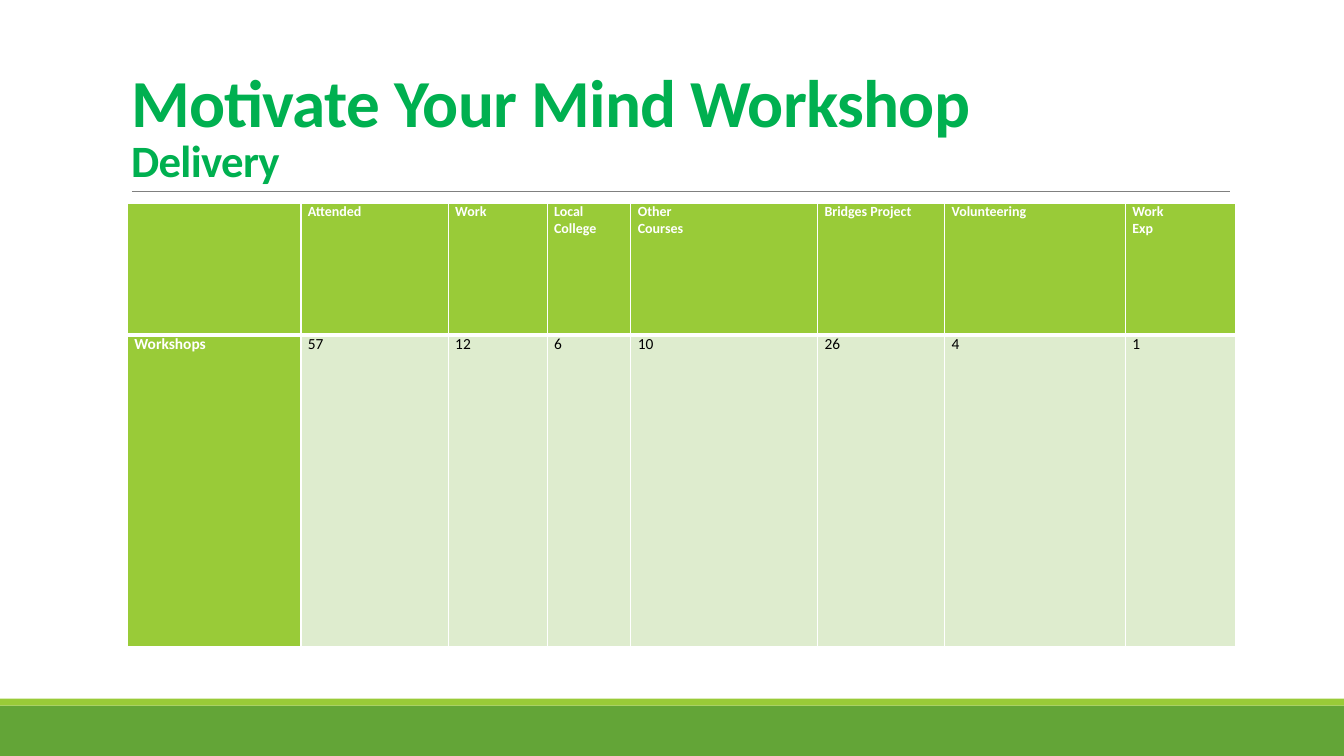
import pptx
import pptx.util
import pptx.dml.color
import pptx.enum.shapes
import pptx.enum.text
import pptx.oxml
import pptx.oxml.ns
from dataclasses import dataclass

Pt = pptx.util.Pt


@dataclass(frozen=True)
class Theme:
    font: str = "Calibri"
    title: str = "00B050"
    band: str = "63A537"
    lime: str = "99CB38"
    pale: str = "DEECCE"
    rule: str = "808080"
    white: str = "FFFFFF"
    black: str = "000000"
    head: int = 48
    sub: int = 32
    label: int = 10
    body: int = 11


THEME = Theme()

WIDTHS = [123.84, 105.12, 70.56, 59.76, 133.2, 90.72, 128.88, 78.48]
HEIGHTS = [94, 222.8]
ROWS = [
    ["", "Attended", "Work", "Local\nCollege", "Other\nCourses",
     "Bridges Project", "Volunteering", "Work\nExp"],
    ["Workshops", "57", "12", "6", "10", "26", "4", "1"],
]


def rgb(code):
    return pptx.dml.color.RGBColor.from_string(code)


def style(para, color, bold, size=None):
    font = para.font
    font.name = THEME.font
    font.color.rgb = rgb(color)
    font.bold = bold
    if size:
        font.size = Pt(size)


def add_band(slide, left, top, width, height, color):
    band = slide.shapes.add_shape(
        pptx.enum.shapes.MSO_SHAPE.RECTANGLE,
        Pt(left), Pt(top), Pt(width), Pt(height))
    band.shadow.inherit = False
    band.fill.solid()
    band.fill.fore_color.rgb = rgb(color)
    band.line.fill.background()


def add_foot(slide, left, top, width, height):
    strip = 5
    add_band(slide, left, top + strip, width, height - strip, THEME.band)
    add_band(slide, left, top, width, strip, THEME.lime)


def add_title(slide, left, top, width, height):
    # Rule below the title
    base = Pt(top + height)
    rule = slide.shapes.add_connector(
        pptx.enum.shapes.MSO_CONNECTOR.STRAIGHT,
        Pt(left + 7.9), base, Pt(left + width), base)
    rule.line.color.rgb = rgb(THEME.rule)
    rule.line.width = Pt(0.5)
    rule._element.spPr.append(pptx.oxml.parse_xml(
        "<a:effectLst %s/>" % pptx.oxml.ns.nsdecls("a")))

    # Two lines in one paragraph
    title = slide.shapes.title
    title.left, title.top = Pt(left), Pt(top)
    title.width, title.height = Pt(width), Pt(height)
    frame = title.text_frame
    frame.word_wrap = True
    frame.auto_size = pptx.enum.text.MSO_AUTO_SIZE.NONE
    frame.vertical_anchor = pptx.enum.text.MSO_ANCHOR.BOTTOM
    para = frame.paragraphs[0]
    para.alignment = pptx.enum.text.PP_ALIGN.LEFT
    para.line_spacing = 0.85
    style(para, THEME.title, True)
    lines = [("Motivate Your Mind Workshop", THEME.head),
             ("Delivery", THEME.sub)]
    for index, (text, size) in enumerate(lines):
        if index:
            para.add_line_break()
        run = para.add_run()
        run.text = text
        run.font.size = Pt(size)
        run._r.get_or_add_rPr().set("spc", "-50")


def add_edges(cell, base):
    props = cell._tc.get_or_add_tcPr()
    for side, width in (("L", 1), ("R", 1), ("T", 1), ("B", base)):
        props.append(pptx.oxml.parse_xml(
            '<a:ln%s %s w="%d"><a:solidFill><a:srgbClr val="%s"/>'
            '</a:solidFill></a:ln%s>' % (
                side, pptx.oxml.ns.nsdecls("a"), Pt(width),
                THEME.white, side)))


def fill_cell(cell, text, head, first):
    strong = head or first
    add_edges(cell, 3 if head else 1)
    cell.fill.solid()
    cell.fill.fore_color.rgb = rgb(THEME.lime if strong else THEME.pale)
    cell.margin_left = cell.margin_right = Pt(5)
    cell.margin_top = cell.margin_bottom = Pt(0)
    cell.text = text
    for para in cell.text_frame.paragraphs:
        style(para, THEME.white if strong else THEME.black, strong,
              THEME.label if head else THEME.body)


def add_grid(slide, left, top, width, height):
    grid = slide.shapes.add_table(
        len(ROWS), len(WIDTHS), Pt(left), Pt(top), Pt(width), Pt(height)).table
    for col, size in zip(grid.columns, WIDTHS):
        col.width = Pt(size * width / sum(WIDTHS))
    for row, size in zip(grid.rows, HEIGHTS):
        row.height = Pt(size * height / sum(HEIGHTS))
    for r, texts in enumerate(ROWS):
        for c, text in enumerate(texts):
            fill_cell(grid.cell(r, c), text, r == 0, c == 0)


def main():
    deck = pptx.Presentation()
    deck.slide_width, deck.slide_height = Pt(960), Pt(540)
    slide = deck.slides.add_slide(deck.slide_layouts[5])
    add_foot(slide, 0, 499, 960, 41)
    add_title(slide, 86.4, 22.3, 792, 114.5)
    add_grid(slide, 91, 145.3, 791.5, 316.8)
    deck.save("out.pptx")


if __name__ == "__main__":
    main()
